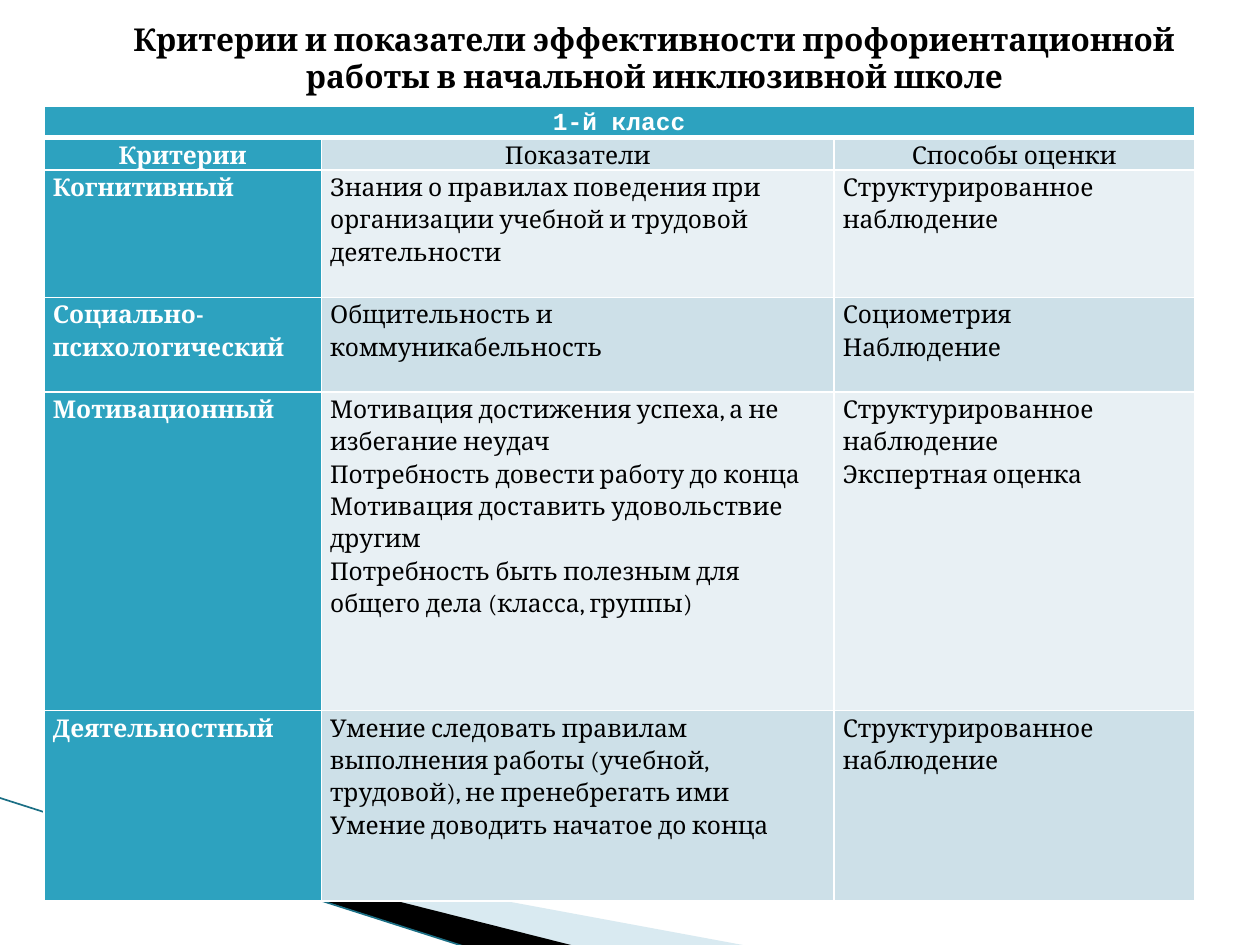
"""Build a slide with a table of criteria for career guidance in primary school."""
from lxml.etree import SubElement
from pptx import Presentation
from pptx.dml.color import RGBColor
from pptx.enum.shapes import MSO_CONNECTOR
from pptx.enum.text import MSO_ANCHOR, MSO_AUTO_SIZE, PP_ALIGN
from pptx.oxml.ns import qn
from pptx.util import Pt

SCALE = 9144
COLORS = {
    "white": "FFFFFF",
    "black": "000000",
    "teal": "2DA2BF",
    "dark_teal": "1B6F85",
    "wedge": "A0CBDC",
    "band": "CDE0E8",
    "light_band": "E8F0F4",
}
FORMATS = {
    "title": {"name": "Cambria", "size": Pt(18), "bold": True},
    "class": {"name": "Courier New", "size": Pt(14), "bold": True},
    "criterion": {"name": "Cambria", "size": Pt(14), "bold": True},
    "body": {"name": "Cambria", "size": Pt(14), "bold": False},
}
COLUMN_WIDTHS = [220, 407, 286]
ROW_HEIGHTS = [25, 25, 101, 75, 253, 151]
ROWS = [
    ["1-й класс", "", ""],
    ["Критерии", "Показатели", "Способы оценки"],
    [
        "Когнитивный",
        "Знания о правилах поведения при организации учебной и трудовой деятельности",
        "Структурированное наблюдение",
    ],
    [
        "Социально-психологический",
        "Общительность и коммуникабельность",
        "Социометрия\nНаблюдение",
    ],
    [
        "Мотивационный",
        "Мотивация достижения успеха, а не избегание неудач\n"
        "Потребность довести работу до конца\n"
        "Мотивация доставить удовольствие другим\n"
        "Потребность быть полезным для общего дела (класса, группы)",
        "Структурированное наблюдение\nЭкспертная оценка",
    ],
    [
        "Деятельностный",
        "Умение следовать правилам выполнения работы (учебной, трудовой), не пренебрегать ими\n"
        "Умение доводить начатое до конца",
        "Структурированное наблюдение",
    ],
]


def px(length):
    return round(length * SCALE)


def rgb(color):
    return RGBColor.from_string(COLORS[color])


class SlideBuilder:
    def __init__(self, slide):
        self.slide = slide

    def fill_frame(self, frame, text, style, color, align, spacing=None):
        frame.word_wrap = True
        frame.text = text
        for paragraph in frame.paragraphs:
            paragraph.alignment = align
            paragraph.line_spacing = spacing
            for run in paragraph.runs:
                for name, value in FORMATS[style].items():
                    setattr(run.font, name, value)
                run.font.color.rgb = rgb(color)

    def wedge(self, points, color, opacity=100):
        builder = self.slide.shapes.build_freeform(*points[0], scale=SCALE)
        builder.add_line_segments(points[1:], close=True)
        shape = builder.convert_to_shape()
        shape.shadow.inherit = False
        shape.line.fill.background()
        shape.fill.solid()
        shape.fill.fore_color.rgb = rgb(color)
        if opacity < 100:
            fill_color = shape._element.spPr.find(qn("a:solidFill"))[0]
            SubElement(fill_color, qn("a:alpha"), val=str(opacity * 1000))

    def line(self, start, end, color, width):
        ends = [px(length) for length in (*start, *end)]
        connector = self.slide.shapes.add_connector(MSO_CONNECTOR.STRAIGHT, *ends)
        connector.line.color.rgb = rgb(color)
        connector.line.width = Pt(width)
        SubElement(connector._element.spPr, qn("a:effectLst"))

    def text(self, box, text, style, color):
        shape = self.slide.shapes.add_textbox(*map(px, box))
        frame = shape.text_frame
        self.fill_frame(frame, text, style, color, PP_ALIGN.CENTER)
        frame.vertical_anchor = MSO_ANCHOR.MIDDLE
        frame.auto_size = MSO_AUTO_SIZE.SHAPE_TO_FIT_TEXT

    def borders(self, cell, widths):
        properties = cell._tc.get_or_add_tcPr()
        for side, width in widths.items():
            border = SubElement(properties, qn(f"a:ln{side}"), w=str(Pt(width)))
            fill = SubElement(border, qn("a:solidFill"))
            SubElement(fill, qn("a:srgbClr"), val=COLORS["white"])

    def cell(self, cell, text, row, column):
        is_label = row == 0 or column == 0
        band = "band" if row % 2 else "light_band"
        margins = {"margin_left": px(7), "margin_right": px(7), "margin_top": 0, "margin_bottom": 0}
        for name, value in margins.items():
            setattr(cell, name, value)
        self.borders(cell, {"L": 1, "R": 1, "T": 3 if row == 1 else 1, "B": 3 if row == 0 else 1})
        cell.fill.solid()
        cell.fill.fore_color.rgb = rgb("teal" if is_label else band)
        style = "class" if row == 0 else "criterion" if column == 0 else "body"
        align = PP_ALIGN.CENTER if row < 2 else PP_ALIGN.LEFT
        color = "white" if is_label else "black"
        self.fill_frame(cell.text_frame, text, style, color, align, 1.15)

    def table(self, left, top):
        box = (left, top, sum(COLUMN_WIDTHS), sum(ROW_HEIGHTS))
        shape = self.slide.shapes.add_table(len(ROWS), len(COLUMN_WIDTHS), *map(px, box))
        table = shape.table
        table.first_row = table.horz_banding = False
        for column, width in zip(table.columns, COLUMN_WIDTHS):
            column.width = px(width)
        for row, height in zip(table.rows, ROW_HEIGHTS):
            row.height = px(height)
        for row, texts in enumerate(ROWS):
            for column, text in enumerate(texts):
                self.cell(table.cell(row, column), text, row, column)
        table.cell(0, 0).merge(table.cell(0, len(COLUMN_WIDTHS) - 1))


def main():
    presentation = Presentation()
    presentation.slide_width, presentation.slide_height = px(1000), px(750)
    builder = SlideBuilder(presentation.slides.add_slide(presentation.slide_layouts[6]))
    builder.wedge([(55, 651), (595, 751), (456, 751), (55, 650)], "wedge", 40)
    builder.wedge([(53, 649), (457, 751), (372, 752), (54, 650)], "black")
    builder.line((-1, 633), (371, 752), "dark_teal", 0.95)
    builder.table(35, 84)
    builder.text(
        (59, 10, 921, 71),
        "Критерии и показатели эффективности профориентационной работы в начальной инклюзивной школе",
        "title",
        "black",
    )
    presentation.save("out.pptx")


if __name__ == "__main__":
    main()
